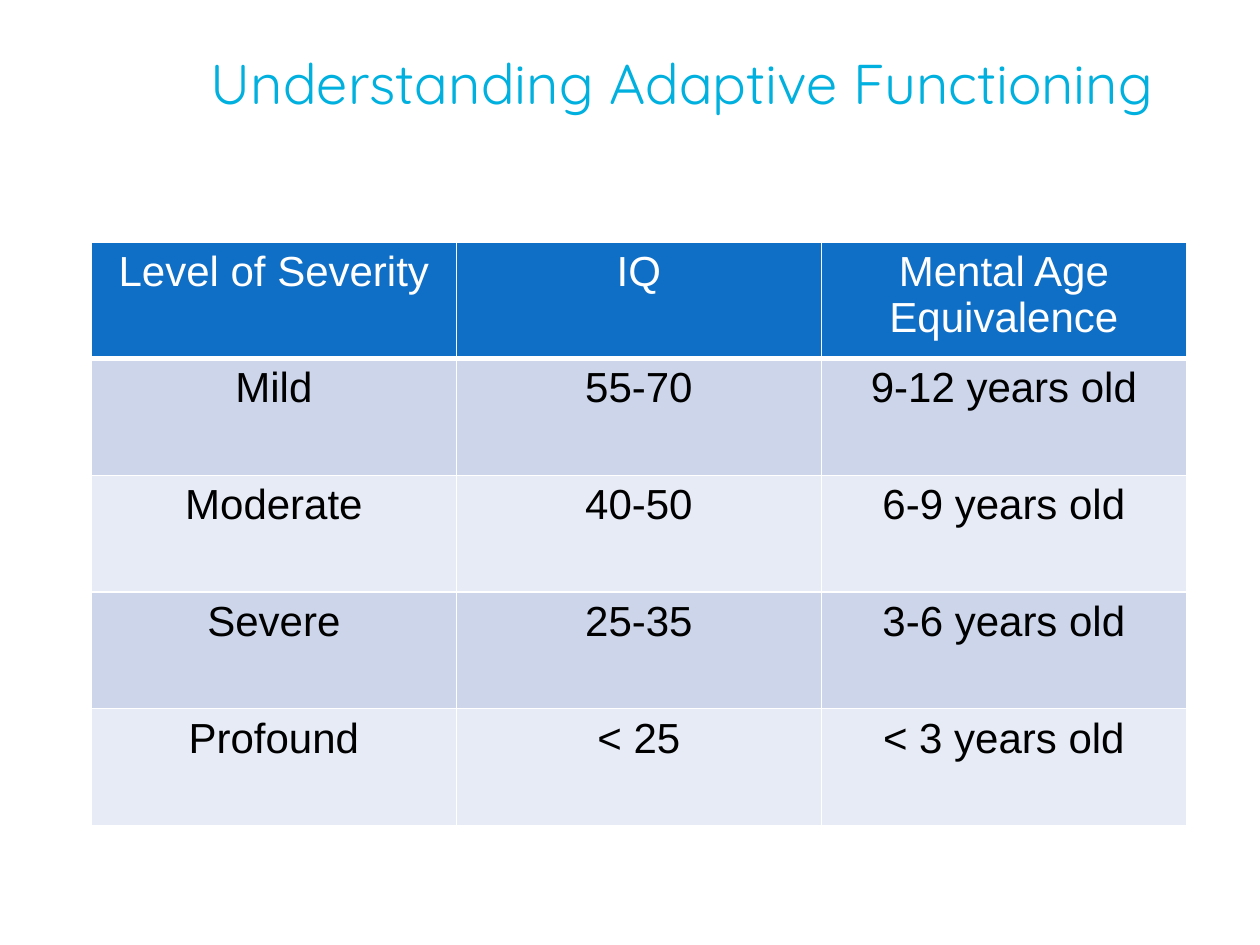
from dataclasses import dataclass

from lxml.etree import SubElement as Sub
from pptx import Presentation as Deck
from pptx.dml.color import RGBColor as Rgb
from pptx.enum.shapes import MSO_SHAPE as Kind
from pptx.enum.text import MSO_ANCHOR as Anchor, PP_ALIGN as Align
from pptx.oxml.ns import qn
from pptx.util import Pt

HUES = {"white": "FFFFFF", "black": "000000", "cyan": "00B0DE",
        "head": "0F6FC6", "dark": "CCD5EA", "light": "E7EBF5"}


@dataclass
class Row:
    texts: tuple[str, str, str]
    fill: str
    ink: str = "black"
    base: float = 1  # bottom border width


ROWS = [
    Row(("Level of Severity", "IQ", "Mental Age Equivalence"), "head", "white", 3),
    Row(("Mild", "55-70", "9-12 years old"), "dark"),
    Row(("Moderate", "40-50", "6-9 years old"), "light"),
    Row(("Severe", "25-35", "3-6 years old"), "dark"),
    Row(("Profound", "< 25", "< 3 years old"), "light"),
]
WIDE, HIGH = 208.6, 66.7


def hue(name: str) -> Rgb:
    return Rgb.from_string(HUES[name])


def paint(item, name: str) -> None:
    item.fill.solid()
    item.fill.fore_color.rgb = hue(name)


def write(frame, text: str, *, size: float, ink: str, face: str = "Arial") -> None:
    frame.word_wrap = True
    par = frame.paragraphs[0]
    par.alignment = Align.CENTER
    run = par.add_run()
    run.text = text
    font = run.font
    font.name, font.size, font.bold = face, Pt(size), False
    font.color.rgb = hue(ink)


def edge(cell, base: float) -> None:
    """Draw white borders; the bottom one is base points wide."""
    props = cell._tc.get_or_add_tcPr()
    sides = {"lnL": 1, "lnR": 1, "lnT": 1, "lnB": base}
    for spot, (tag, width) in enumerate(sides.items()):
        line = Sub(props, qn(f"a:{tag}"), w=str(Pt(width)))
        fill = Sub(line, qn("a:solidFill"))
        Sub(fill, qn("a:srgbClr"), val=HUES["white"])
        props.insert(spot, line)


def draw_grid(slide) -> None:
    cols = len(ROWS[0].texts)
    grid = slide.shapes.add_table(len(ROWS), cols, Pt(52.2), Pt(138.2),
                                  Pt(WIDE * cols), Pt(HIGH * len(ROWS))).table
    for col in grid.columns:
        col.width = Pt(WIDE)
    for line, row in zip(grid.rows, ROWS):
        line.height = Pt(HIGH)
        for cell, text in zip(line.cells, row.texts):
            paint(cell, row.fill)
            edge(cell, row.base)
            write(cell.text_frame, text, size=24, ink=row.ink)


def draw_title(slide) -> None:
    box = slide.shapes.add_shape(Kind.RECTANGLE, Pt(66), Pt(0), Pt(648), Pt(66))
    box.shadow.inherit = False
    paint(box, "white")
    box.line.fill.background()
    frame = box.text_frame
    frame.vertical_anchor = Anchor.BOTTOM
    frame.margin_left = frame.margin_right = frame.margin_bottom = Pt(0)
    frame.margin_top = Pt(3.6)
    write(frame, "Understanding Adaptive Functioning",
          size=32, ink="cyan", face="Quicksand")


def main() -> None:
    deck = Deck()
    deck.slide_width, deck.slide_height = Pt(720), Pt(540)
    slide = deck.slides.add_slide(deck.slide_layouts[6])
    draw_grid(slide)
    draw_title(slide)
    deck.save("out.pptx")


if __name__ == "__main__":
    main()
